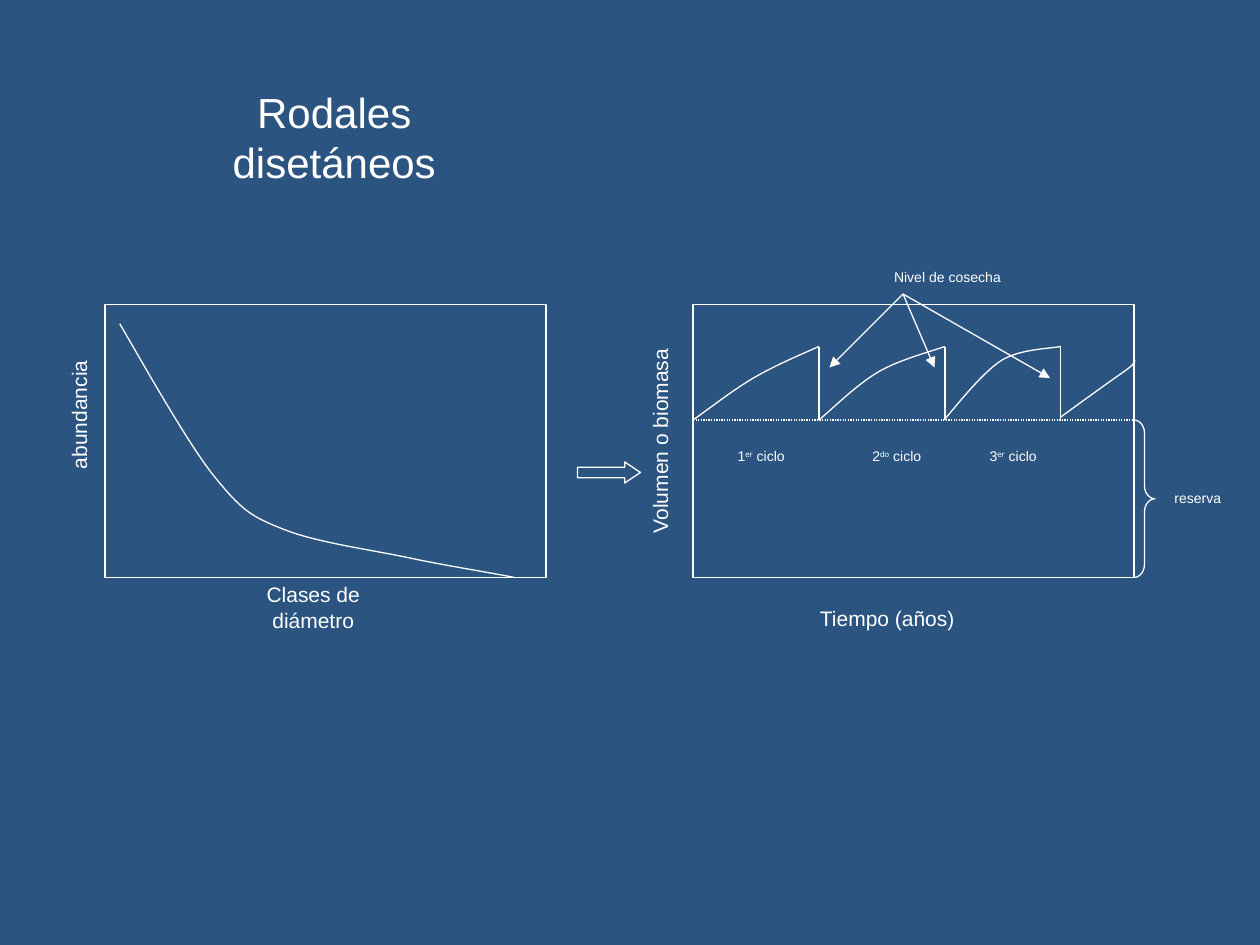
from lxml import etree
from pptx import Presentation
from pptx import util as u
from pptx.dml import color
from pptx.enum import dml, shapes, text
from pptx.oxml import ns

WHITE = "FFFFFF"
BLUE = "2B5481"
FRAME_TOP, FRAME_WIDTH, FRAME_HEIGHT = 174, 252, 156
LEFT_FRAME, RIGHT_FRAME = 60, 396
CREST, RESERVE = 198, 240
DECAY = [(68.4, 185), (77, 199.4), (106.6, 252.7), (122.4, 272.2), (138.2, 291.6),
         (143.3, 295.2), (162.4, 302.6), (181.4, 310.3), (215.3, 314.6),
         (237.6, 319.6), (259.2, 324), (282.2, 327.6), (294, 330)]
GROWTH = [
    [(396, RESERVE), (401.8, 236.2), (418.3, 223.2), (430.6, 216), (442.8, 208.8),
     (460, 201.6), (468, CREST)],
    [(468, RESERVE), (473.8, 235.4), (488.9, 220.3), (501.1, 213.1), (512.6, 205.9),
     (532, 200.9), (540, CREST)],
    [(539.5, RESERVE), (544.3, 234.7), (560.9, 213.1), (572.4, 205.9), (583.2, 199.4),
     (599, 199.4), (606.2, CREST)],
    [(606.2, 238.3), (612, 234), (635, 217.4), (642.2, 212.4), (649.4, 207.4),
     (647.3, 207.4), (648.7, 205.9)],
]


def rgb(value):
    """Turn a hex string into a colour."""
    return color.RGBColor.from_string(value)


def style_outline(shape, fill=None):
    """Give a shape a thin white outline and an optional fill."""
    shape.shadow.inherit = False
    if fill:
        shape.fill.solid()
        shape.fill.fore_color.rgb = rgb(fill)
    else:
        shape.fill.background()
    shape.line.color.rgb = rgb(WHITE)
    shape.line.width = u.Pt(0.75)


def add_outline(slide, kind, left, top, width, height, fill=None):
    """Add an outlined preset shape."""
    shape = slide.shapes.add_shape(kind, u.Pt(left), u.Pt(top), u.Pt(width), u.Pt(height))
    style_outline(shape, fill)
    return shape


def add_curve(slide, points):
    """Add an open Bézier curve from a start point and triples of points."""
    scaled = [(u.Pt(x), u.Pt(y)) for x, y in points]
    builder = slide.shapes.build_freeform(*scaled[0])
    builder.add_line_segments(scaled[1:], close=False)
    shape = builder.convert_to_shape()
    segments = list(shape._element.iter(ns.qn("a:lnTo")))
    for start in range(0, len(segments), 3):
        bezier = etree.Element(ns.qn("a:cubicBezTo"))
        segments[start].addprevious(bezier)
        for segment in segments[start:start + 3]:
            bezier.append(segment[0])
            segment.getparent().remove(segment)
    style_outline(shape)


def add_line(slide, start, end, dash=None, arrow=False):
    """Add a straight white line, optionally dotted or with an arrowhead."""
    line = slide.shapes.add_connector(shapes.MSO_CONNECTOR.STRAIGHT,
                                      *(u.Pt(value) for value in (*start, *end)))
    line.line.color.rgb = rgb(WHITE)
    line.line.width = u.Pt(0.75)
    if dash:
        line.line.dash_style = dash
    if arrow:
        etree.SubElement(line.line._get_or_add_ln(), ns.qn("a:tailEnd"), type="triangle")
    etree.SubElement(line._element.spPr, ns.qn("a:effectLst"))


def write_text(frame, runs, size):
    """Write centred white runs; each run is a text and a superscript flag."""
    frame.vertical_anchor = text.MSO_ANCHOR.MIDDLE
    paragraph = frame.paragraphs[0]
    paragraph.alignment = text.PP_ALIGN.CENTER
    for words, raised in runs:
        run = paragraph.add_run()
        run.text = words
        run.font.name = "Arial"
        run.font.size = u.Pt(size)
        run.font.color.rgb = rgb(WHITE)
        if raised:
            run._r.get_or_add_rPr().set("baseline", "30000")


def add_label(slide, runs, left, top, width, height, size, rotation=0, inset=None):
    """Add a text label; an inset makes it wrap inside its box."""
    box = slide.shapes.add_textbox(u.Pt(left), u.Pt(top), u.Pt(width), u.Pt(height))
    box.rotation = rotation
    frame = box.text_frame
    frame.word_wrap = inset is not None
    if inset is not None:
        frame.margin_left = frame.margin_right = u.Pt(inset)
    write_text(frame, runs, size)


def add_title(slide, words):
    """Place and fill the title placeholder."""
    title = slide.shapes.title
    title.left, title.top, title.width, title.height = (
        u.Pt(value) for value in (102, 45.5, 178, 65))
    title.text_frame.word_wrap = True
    title.text_frame.auto_size = text.MSO_AUTO_SIZE.NONE
    write_text(title.text_frame, [(words, False)], 24)


def add_abundance_chart(slide):
    """Draw abundance against diameter class."""
    add_outline(slide, shapes.MSO_SHAPE.RECTANGLE, LEFT_FRAME, FRAME_TOP,
                FRAME_WIDTH, FRAME_HEIGHT, BLUE)
    add_curve(slide, DECAY)
    add_label(slide, [("Clases de diámetro", False)], 120, 336, 118, 22, 12, inset=16)
    add_label(slide, [("abundancia", False)], 5, 222.5, 80, 29, 12, rotation=270)


def add_harvest_chart(slide):
    """Draw volume against time with its harvest cycles and reserve."""
    right = RIGHT_FRAME + FRAME_WIDTH
    add_outline(slide, shapes.MSO_SHAPE.RECTANGLE, RIGHT_FRAME, FRAME_TOP,
                FRAME_WIDTH, FRAME_HEIGHT, BLUE)
    for points in GROWTH:
        add_curve(slide, points)
    for x in (468, 540, 606.2):
        add_line(slide, (x, CREST), (x, RESERVE))
    add_line(slide, (RIGHT_FRAME, RESERVE), (right, RESERVE),
             dash=dml.MSO_LINE.ROUND_DOT)
    for tip in ((474, 210), (534, 210), (600, 216)):
        add_line(slide, (516, 168), tip, arrow=True)
    for number, ending, left in (("1", "er", 411), ("2", "do", 488.5), ("3", "er", 555)):
        runs = [(number, False), (ending, True), (" ciclo", False)]
        add_label(slide, runs, left, 252, 48, 17, 8)
    brace = add_outline(slide, shapes.MSO_SHAPE.RIGHT_BRACE, right, RESERVE, 12, 90)
    brace.adjustments[0] = 0.625
    add_label(slide, [("reserva", False)], 661.5, 276, 46, 17, 8)
    add_label(slide, [("Nivel de cosecha", False)], 501.5, 150, 80, 17, 8)
    add_label(slide, [("Tiempo (años)", False)], 459, 342, 96, 22, 12)
    add_label(slide, [("Volumen o biomasa", False)], 314, 241, 126, 22, 12, rotation=270)


def main():
    """Build and save the slide."""
    presentation = Presentation()
    presentation.slide_width, presentation.slide_height = u.Pt(720), u.Pt(540)
    slide = presentation.slides.add_slide(presentation.slide_layouts[5])
    slide.background.fill.solid()
    slide.background.fill.fore_color.rgb = rgb(BLUE)
    add_abundance_chart(slide)
    add_harvest_chart(slide)
    arrow = add_outline(slide, shapes.MSO_SHAPE.RIGHT_ARROW, 330, 264, 36, 12)
    arrow.adjustments[1] = 0.75
    add_title(slide, "Rodales disetáneos")
    presentation.save("out.pptx")


if __name__ == "__main__":
    main()
